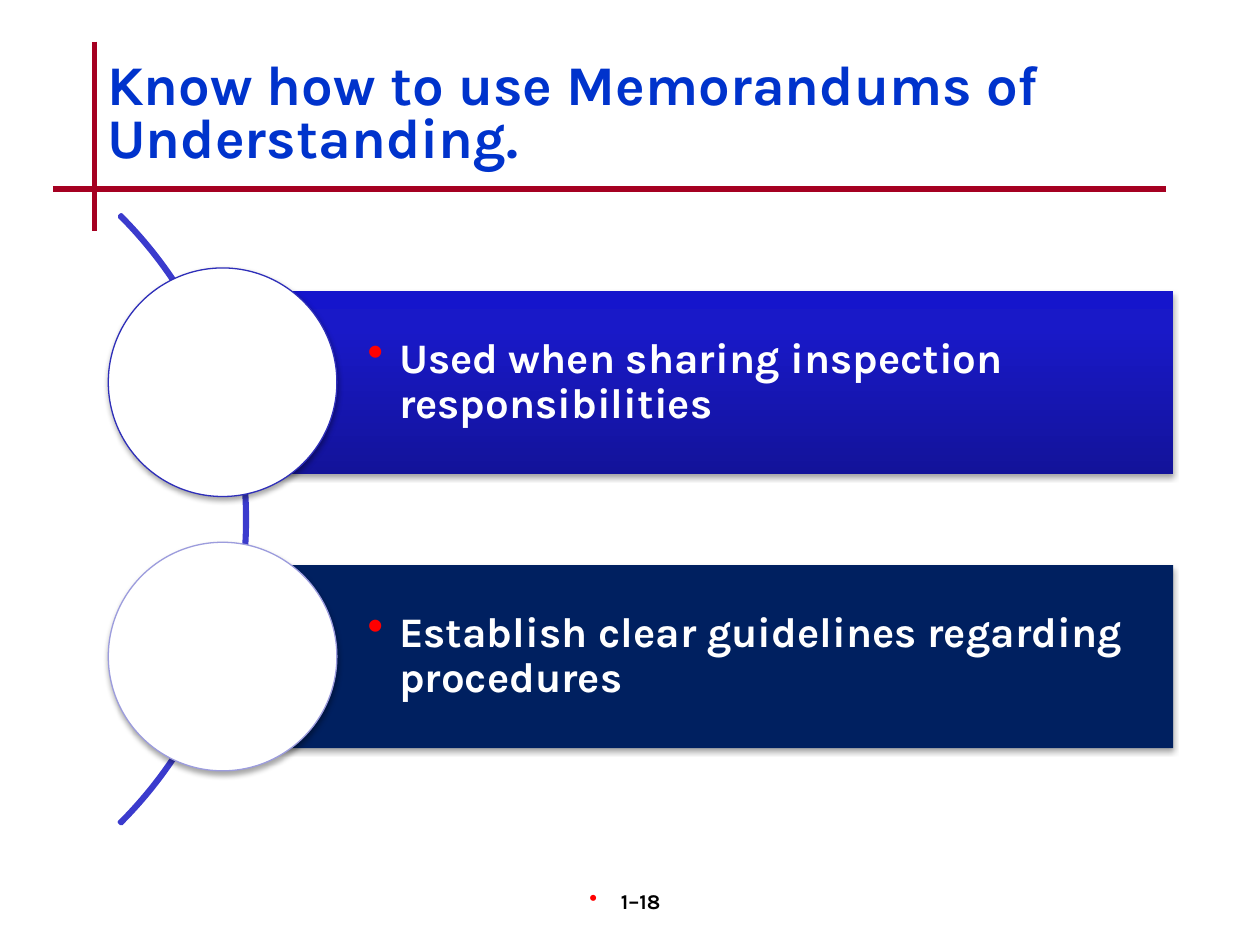
import pptx
import pptx.util
import pptx.dml.color
import pptx.enum.shapes
import pptx.enum.text
import pptx.oxml
import pptx.oxml.ns

IN = pptx.util.Inches
SHAPE = pptx.enum.shapes.MSO_SHAPE
ALIGN = pptx.enum.text.PP_ALIGN
ANCHOR = pptx.enum.text.MSO_ANCHOR
NS = pptx.oxml.ns.nsdecls("a")
W, H = 10, 7.5
BLUE_STOPS = [(0, "13139A"), (80, "1919C8"), (100, "1515CC")]
ITEMS = [
    ("Used when sharing inspection responsibilities", BLUE_STOPS, "2E2EB9"),
    ("Establish clear guidelines regarding procedures", "002060", "9C9CDD"),
]


def rgb(value):
    """Return the colour for a hex string."""
    return pptx.dml.color.RGBColor.from_string(value)


def inches(*values):
    """Convert inch values to lengths."""
    return [IN(v) for v in values]


def add_bullet(p, indent=0.25):
    """Give a paragraph a red bullet with a hanging indent."""
    pPr = p._p.get_or_add_pPr()
    pPr.set("marL", str(IN(indent)))
    pPr.set("indent", str(-IN(indent)))
    for xml in (f'<a:buClr {NS}><a:srgbClr val="FF0000"/></a:buClr>',
                f'<a:buSzPct {NS} val="110000"/>',
                f'<a:buChar {NS} char="•"/>'):
        pPr.append(pptx.oxml.parse_xml(xml))


def write(sp, text, size, color, align=ALIGN.LEFT, anchor=ANCHOR.TOP,
          spacing=1.0, insets=(0.1, 0.05, 0.1, 0.05), bullet=False):
    """Write one formatted bold paragraph into a shape."""
    tf = sp.text_frame
    tf.word_wrap = True
    tf.auto_size = pptx.enum.text.MSO_AUTO_SIZE.NONE
    tf.vertical_anchor = anchor
    (tf.margin_left, tf.margin_top,
     tf.margin_right, tf.margin_bottom) = inches(*insets)
    p = tf.paragraphs[0]
    p.alignment = align
    p.line_spacing = spacing
    if bullet:
        add_bullet(p)
    r = p.add_run()
    r.text = text
    r.font.name = "Karla"
    r.font.size = pptx.util.Pt(size)
    r.font.bold = True
    r.font.color.rgb = rgb(color)


def paint(sp, fill=None, line=None, width=0.75, shadow=False):
    """Set the fill, outline and shadow of a shape."""
    if isinstance(fill, list):
        stops = "".join(f'<a:gs pos="{pos * 1000}"><a:srgbClr val="{c}"/></a:gs>'
                        for pos, c in fill)
        sp._element.spPr.append(pptx.oxml.parse_xml(
            f'<a:gradFill {NS} rotWithShape="1"><a:gsLst>{stops}</a:gsLst>'
            '<a:lin ang="16200000" scaled="0"/></a:gradFill>'))
    elif fill:
        sp.fill.solid()
        sp.fill.fore_color.rgb = rgb(fill)
    else:
        sp.fill.background()
    if line:
        sp.line.color.rgb = rgb(line)
        sp.line.width = pptx.util.Pt(width)
    else:
        sp.line.fill.background()
    sp.shadow.inherit = False
    if shadow:
        effects = sp._element.spPr.find(pptx.oxml.ns.qn("a:effectLst"))
        effects.append(pptx.oxml.parse_xml(
            f'<a:outerShdw {NS} blurRad="40000" dist="23000" dir="5400000" '
            'rotWithShape="0"><a:srgbClr val="000000"><a:alpha val="35000"/>'
            '</a:srgbClr></a:outerShdw>'))


def add_rule(s, *ends):
    """Draw one red rule between two points."""
    cxn = s.shapes.add_connector(
        pptx.enum.shapes.MSO_CONNECTOR.STRAIGHT, *inches(*ends))
    cxn.line.color.rgb = rgb("A50021")
    cxn.line.width = pptx.util.Pt(3)
    cxn._element.spPr.append(pptx.oxml.parse_xml(f"<a:effectLst {NS}/>"))


def add_header(s, x, y, w, h):
    """Place the title in its box with crossing rules around it."""
    add_rule(s, x, y - 0.09, x, y + h + 0.41)
    add_rule(s, x - 0.33, y + h + 0.08, x + w, y + h + 0.08)
    sp = s.shapes.title
    sp.left, sp.top, sp.width, sp.height = inches(x, y, w, h)
    write(sp, "Know how to use Memorandums of Understanding.", 32, "0033CC",
          anchor=ANCHOR.MIDDLE, spacing=0.8)


def add_item(s, x, y, w, row, text, fill, outline):
    """Place a bar two rows high with a circle centred on its left edge."""
    size = 2.5 * row
    bar = s.shapes.add_shape(
        SHAPE.RECTANGLE, *inches(x + size / 2, y, w - size / 2, 2 * row))
    paint(bar, fill, shadow=True)
    write(bar, text, 24, "FFFFFF", anchor=ANCHOR.MIDDLE, spacing=0.9,
          insets=(1.15, 0.07, 0.07, 0.07), bullet=True)
    circle = s.shapes.add_shape(
        SHAPE.OVAL, *inches(x, y + row - size / 2, size, size))
    paint(circle, "FFFFFF", outline, shadow=True)


def add_curved_list(s, x, y, w, h):
    """Place the arc and its items on an even grid of rows."""
    row = h / (3 * len(ITEMS) + 1)
    size = 9.42 * row
    arc = s.shapes.add_shape(
        SHAPE.BLOCK_ARC,
        *inches(x - 7.9 * row, y + (h - size) / 2, size, size))
    for i, value in enumerate((189, 27, 0.003)):
        arc.adjustments[i] = value
    paint(arc, line="3B3BCD", width=2)
    for i, item in enumerate(ITEMS):
        add_item(s, x, y + (1 + 3 * i) * row, w, row, *item)


def add_page_number(s, x, y, w, h):
    """Place the bulleted page number."""
    sp = s.shapes.add_textbox(*inches(x, y, w, h))
    write(sp, "1–18", 12, "000000", align=ALIGN.CENTER, bullet=True)


def main():
    """Build and save the slide."""
    prs = pptx.Presentation()
    prs.slide_width, prs.slide_height = inches(W, H)
    s = prs.slides.add_slide(prs.slide_layouts[5])
    add_header(s, 0.075 * W, 0.056 * H, 0.85 * W, 1)
    add_curved_list(s, 0.086 * W, 0.211 * H, 0.845 * W, 5.08)
    add_page_number(s, 0.392 * W, H - 0.5, 0.208 * W, 0.5)
    prs.save("out.pptx")


if __name__ == "__main__":
    main()
